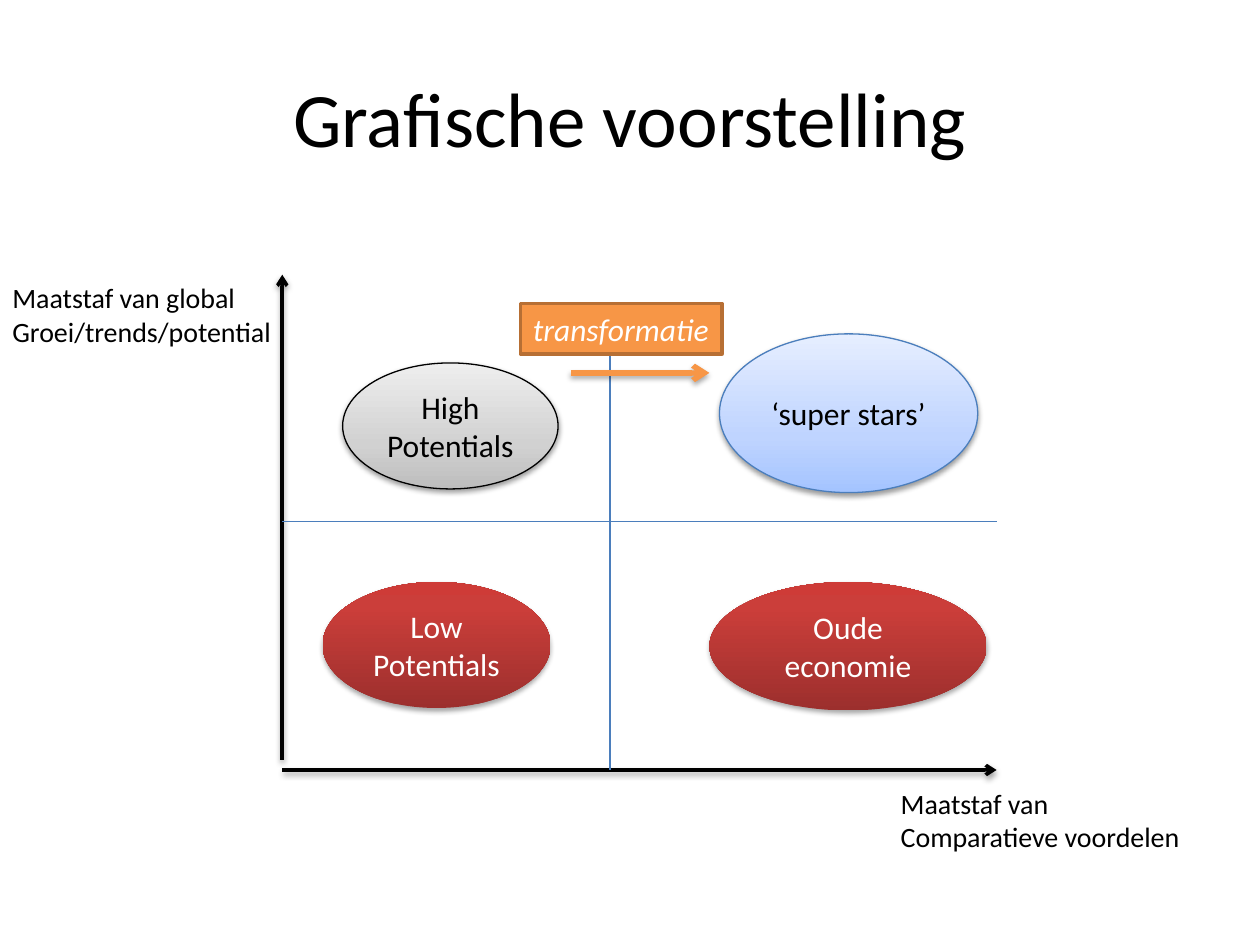
"""Build a quadrant slide that plots growth potential against comparative advantage."""
import dataclasses

import lxml.etree
import pptx
import pptx.dml.color
import pptx.enum.shapes
import pptx.enum.text
import pptx.oxml.ns
import pptx.util

Pt = pptx.util.Pt
Align = pptx.enum.text.PP_ALIGN
Anchor = pptx.enum.text.MSO_ANCHOR
Shape = pptx.enum.shapes.MSO_SHAPE
qn = pptx.oxml.ns.qn


@dataclasses.dataclass(frozen=True)
class Theme:
    font: str = "Calibri"
    title_size: float = 44
    body_size: float = 18
    axis_size: float = 16
    black: str = "000000"
    white: str = "FFFFFF"
    blue: str = "4B7EBC"
    orange: str = "F79646"
    brown: str = "B76F34"
    blue_fade: tuple = ((0, "A4C4FF"), (35, "BFD4FF"), (100, "E6EEFF"))
    grey_fade: tuple = ((0, "BDBDBD"), (35, "D1D1D1"), (100, "EEEEEE"))
    red_fade: tuple = ((0, "9C2F2D"), (80, "CB3E3A"), (100, "CE3B37"))
    soft_shadow: tuple = (38, 1.6)
    strong_shadow: tuple = (35, 1.8)


THEME = Theme()
AXIS_LEFT, AXIS_RIGHT, AXIS_BOTTOM, AXIS_TOP = 161.3, 569.5, 440, 157
MIDDLE_X, MIDDLE_Y, LABEL_TOP = 348.5, 298, 173.5


def rgb(code):
    return pptx.dml.color.RGBColor.from_string(code)


def add_node(parent, tag, **attributes):
    node = lxml.etree.SubElement(parent, qn(tag))
    for name, value in attributes.items():
        node.set(name, str(value))
    return node


def set_effects(item, shadow=None):
    effects = add_node(item._element.spPr, "a:effectLst")
    if shadow:
        opacity, distance = shadow
        outer = add_node(effects, "a:outerShdw", blurRad=Pt(3.1), dist=Pt(distance),
                         dir=5400000, rotWithShape=0)
        color = add_node(outer, "a:srgbClr", val=THEME.black)
        add_node(color, "a:alpha", val=opacity * 1000)


def set_line(item, color, width):
    item.line.color.rgb = rgb(color)
    item.line.width = Pt(width)


def set_gradient(shape, stops):
    shape.fill.gradient()
    shape.fill.gradient_angle = 90
    stop_list = shape._element.spPr.find(".//" + qn("a:gsLst"))
    for stop in list(stop_list):
        stop_list.remove(stop)
    for position, color in stops:
        stop = add_node(stop_list, "a:gs", pos=position * 1000)
        add_node(stop, "a:srgbClr", val=color)


def write(box, lines, size, color, align=Align.LEFT, anchor=Anchor.TOP,
          wrap=True, italic=None):
    frame = box.text_frame
    frame.word_wrap = wrap
    frame.vertical_anchor = anchor
    if not wrap:
        frame.auto_size = pptx.enum.text.MSO_AUTO_SIZE.SHAPE_TO_FIT_TEXT
    for index, line in enumerate(lines):
        para = frame.add_paragraph() if index else frame.paragraphs[0]
        para.alignment = align
        span = para.add_run()
        span.text = line
        span.font.name = THEME.font
        span.font.size = Pt(size)
        span.font.italic = italic
        span.font.color.rgb = rgb(color)


def add_title(page, text):
    box = page.shapes.title
    box.left, box.top, box.width, box.height = Pt(36), Pt(21.6), Pt(648), Pt(90)
    write(box, [text], THEME.title_size, THEME.black, Align.CENTER, Anchor.MIDDLE)


def add_line(page, start, end, color, width, shadow=None):
    line = page.shapes.add_connector(
        pptx.enum.shapes.MSO_CONNECTOR.STRAIGHT, *map(Pt, start + end))
    set_line(line, color, width)
    set_effects(line, shadow)
    return line


def add_arrow(page, start, end, color, width, shadow):
    arrow = add_line(page, start, end, color, width, shadow)
    add_node(arrow.line._get_or_add_ln(), "a:tailEnd", type="arrow")


def add_axis_label(page, place, lines):
    box = page.shapes.add_textbox(*map(Pt, place))
    write(box, lines, THEME.axis_size, THEME.black, wrap=False)


def add_bubble(page, place, text, stops, color, outline, shadow):
    bubble = page.shapes.add_shape(Shape.OVAL, *map(Pt, place))
    set_gradient(bubble, stops)
    if outline:
        set_line(bubble, outline, 0.75)
    else:
        bubble.line.fill.background()
    set_effects(bubble, shadow)
    write(bubble, [text], THEME.body_size, color, Align.CENTER, Anchor.MIDDLE)


def add_tag(page, place, text):
    tag = page.shapes.add_shape(Shape.RECTANGLE, *map(Pt, place))
    tag.fill.solid()
    tag.fill.fore_color.rgb = rgb(THEME.orange)
    set_line(tag, THEME.brown, 2)
    set_effects(tag)
    write(tag, [text], THEME.body_size, THEME.white, wrap=False, italic=True)


def main():
    deck = pptx.Presentation()
    deck.slide_width, deck.slide_height = Pt(720), Pt(540)
    page = deck.slides.add_slide(deck.slide_layouts[5])
    soft, strong = THEME.soft_shadow, THEME.strong_shadow

    add_title(page, "Grafische voorstelling")
    add_arrow(page, (AXIS_LEFT, AXIS_BOTTOM), (AXIS_RIGHT, AXIS_BOTTOM),
              THEME.black, 2, soft)
    add_arrow(page, (AXIS_LEFT, 434.2), (AXIS_LEFT, AXIS_TOP), THEME.black, 2, soft)
    add_axis_label(page, (507.6, 445.7, 176.4, 46),
                   ["Maatstaf van", "Comparatieve voordelen"])
    add_axis_label(page, (0, AXIS_TOP, 164.2, 46),
                   ["Maatstaf van global", "Groei/trends/potential"])
    add_line(page, (MIDDLE_X, LABEL_TOP), (MIDDLE_X, AXIS_BOTTOM), THEME.blue, 0.75)
    add_line(page, (AXIS_LEFT, MIDDLE_Y), (AXIS_RIGHT, MIDDLE_Y), THEME.blue, 0.75)

    bubbles = [
        ((411.1, 190.8, 147.6, 90.7), "‘super stars’",
         THEME.blue_fade, THEME.black, THEME.blue, soft),
        ((195.8, 207.4, 123.1, 72), "High Potentials",
         THEME.grey_fade, THEME.black, THEME.black, soft),
        ((184.3, 332.6, 130.3, 72), "Low Potentials",
         THEME.red_fade, THEME.white, None, strong),
        ((405.4, 332.6, 158.4, 73.4), "Oude economie",
         THEME.red_fade, THEME.white, None, strong),
    ]
    for bubble in bubbles:
        add_bubble(page, *bubble)

    add_arrow(page, (326.2, 213.1), (405.4, 213.1), THEME.orange, 3, strong)
    add_tag(page, (297.4, LABEL_TOP, 115.2, 28.8), "transformatie")
    deck.save("out.pptx")


if __name__ == "__main__":
    main()
